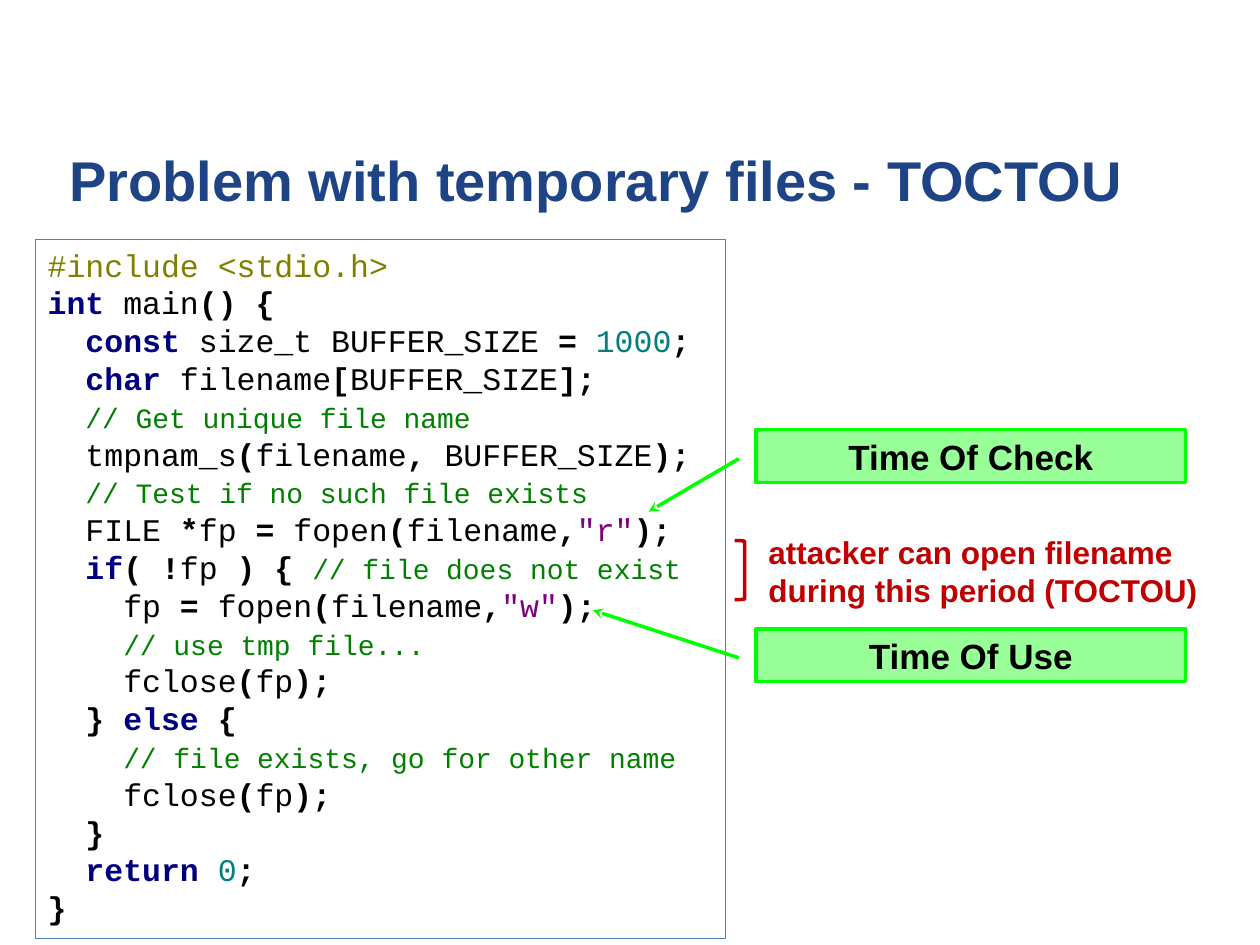
from lxml import etree
from pptx import Presentation
from pptx.dml.color import RGBColor
from pptx.enum.shapes import MSO_SHAPE
from pptx.enum.text import MSO_ANCHOR, MSO_AUTO_SIZE, PP_ALIGN
from pptx.oxml.ns import qn
from pptx.util import Inches, Pt

RECT = MSO_SHAPE.RECTANGLE
BRACKET = MSO_SHAPE.RIGHT_BRACKET
CALLOUT = MSO_SHAPE.LINE_CALLOUT_1
TOP, MIDDLE = MSO_ANCHOR.TOP, MSO_ANCHOR.MIDDLE
LEFT, CENTER = PP_ALIGN.LEFT, PP_ALIGN.CENTER
FIT = MSO_AUTO_SIZE.SHAPE_TO_FIT_TEXT


def paint(target, color):
    target.rgb = RGBColor.from_string(color)


def add_run(para, text, size, color, bold=True, font="Arial"):
    run = para.add_run()
    run.text = text
    run.font.name = font
    run.font.size = Pt(size)
    run.font.bold = bold
    paint(run.font.color, color)


prs = Presentation()
prs.slide_width, prs.slide_height = Inches(10), Inches(7.5)
slide = prs.slides.add_slide(prs.slide_layouts[5])
shapes = slide.shapes

# Title
title = shapes.title
title.left, title.top = Inches(0.55), Inches(0.99)
title.width, title.height = Inches(9), Inches(0.87)
frame = title.text_frame
frame.margin_left = frame.margin_right = 0
frame.margin_top = frame.margin_bottom = 0
frame.vertical_anchor = MIDDLE
frame.paragraphs[0].alignment = LEFT
add_run(frame.paragraphs[0], "Problem with temporary files - TOCTOU", 32, "1E4485")

# Code styles: size, colour, bold
STYLES = {
    "pre": (18, "7F7F00", False),
    "key": (18, "00007F", True),
    "name": (18, "000000", False),
    "op": (18, "000000", True),
    "num": (18, "007F7F", False),
    "str": (18, "7F007F", False),
    "note": (16, "007F00", False),
}
CLOSE = [("name", "fclose"), ("op", "("), ("name", "fp"), ("op", ");")]
OPEN = [("name", "fp "), ("op", "= "), ("name", "fopen"), ("op", "("),
        ("name", "filename"), ("op", ",")]

# Code lines: indent level, then styled pieces
CODE = [
    (0, [("pre", "#include <stdio.h>")]),
    (0, [("key", "int "), ("name", "main"), ("op", "() {")]),
    (1, [("key", "const "), ("name", "size_t BUFFER_SIZE "), ("op", "= "),
         ("num", "1000"), ("op", ";")]),
    (1, [("key", "char "), ("name", "filename"), ("op", "["),
         ("name", "BUFFER_SIZE"), ("op", "];")]),
    (1, [("note", "// Get unique file name")]),
    (1, [("name", "tmpnam_s"), ("op", "("), ("name", "filename"), ("op", ", "),
         ("name", "BUFFER_SIZE"), ("op", ");")]),
    (1, [("note", "// Test if no such file exists")]),
    (1, [("name", "FILE "), ("op", "*"), *OPEN, ("str", '"r"'), ("op", ");")]),
    (1, [("key", "if"), ("op", "( !"), ("name", "fp "), ("op", ") { "),
         ("note", "// file does not exist")]),
    (2, [*OPEN, ("str", '"w"'), ("op", ");")]),
    (2, [("note", "// use tmp file...")]),
    (2, CLOSE),
    (1, [("op", "} "), ("key", "else "), ("op", "{")]),
    (2, [("note", "// file exists, go for other name")]),
    (2, CLOSE),
    (1, [("op", "}")]),
    (1, [("key", "return "), ("num", "0"), ("op", ";")]),
    (0, [("op", "}")]),
]

# Code box
box = shapes.add_shape(RECT, Inches(0.28), Inches(1.9), Inches(5.48), Inches(5.55))
box.shadow.inherit = False
box.fill.solid()
paint(box.fill.fore_color, "FFFFFF")
paint(box.line.color, "4F81BD")
box.line.width = Pt(0.75)
frame = box.text_frame
frame.word_wrap = False
frame.auto_size = FIT
frame.vertical_anchor = TOP
for i, (level, parts) in enumerate(CODE):
    para = frame.add_paragraph() if i else frame.paragraphs[0]
    para.alignment = LEFT
    if level:
        add_run(para, "  " * level, 18, "808080", False, "Courier New")
    for style, text in parts:
        add_run(para, text, *STYLES[style], "Courier New")

# Bracket over the gap between check and use
mark = shapes.add_shape(BRACKET, Inches(5.83), Inches(4.29), Inches(0.08), Inches(0.47))
mark.shadow.inherit = False
mark.fill.background()
paint(mark.line.color, "C00000")
mark.line.width = Pt(2)

# Attack remark
note = shapes.add_textbox(Inches(6), Inches(4.18), Inches(3.64), Inches(0.71))
frame = note.text_frame
frame.word_wrap = False
frame.auto_size = FIT
for i, text in enumerate(["attacker can open filename", "during this period (TOCTOU)"]):
    para = frame.add_paragraph() if i else frame.paragraphs[0]
    add_run(para, text, 18, "C00000")

# Callouts pointing into the code: text, top, tip y, tip x
for text, top, tip_y, tip_x in [("Time Of Check", 3.41, 1.55, -0.25),
                                ("Time Of Use", 4.99, -0.35, -0.38)]:
    call = shapes.add_shape(CALLOUT, Inches(6), Inches(top), Inches(3.41), Inches(0.42))
    for i, value in enumerate([tip_y, tip_x, 0.55, -0.04]):
        call.adjustments[i] = value
    call.shadow.inherit = False
    call.fill.solid()
    paint(call.fill.fore_color, "00FF00")
    tint = call.fill._xPr.find(qn("a:solidFill"))[0]
    etree.SubElement(tint, qn("a:alpha")).set("val", "40000")
    paint(call.line.color, "00FF00")
    call.line.width = Pt(2)
    line = call.line._get_or_add_ln()
    etree.SubElement(line, qn("a:headEnd")).set("type", "stealth")
    para = call.text_frame.paragraphs[0]
    call.text_frame.vertical_anchor = TOP
    para.alignment = CENTER
    add_run(para, text, 20, "000000")

prs.save("out.pptx")
